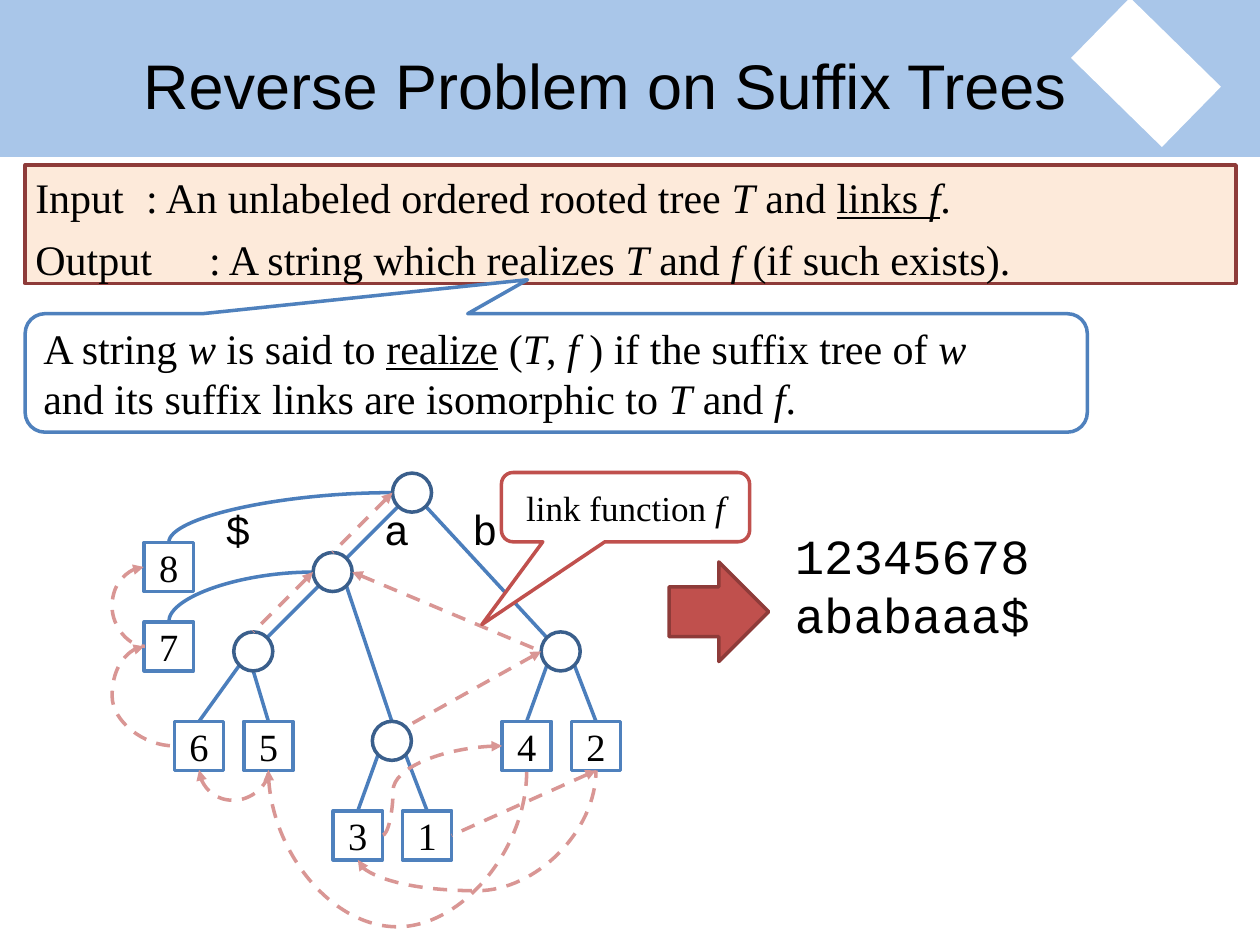
from lxml.etree import SubElement
from pptx import Presentation
from pptx.dml.color import RGBColor
from pptx.enum.dml import MSO_LINE
from pptx.enum.shapes import MSO_CONNECTOR, MSO_SHAPE
from pptx.enum.text import MSO_ANCHOR, PP_ALIGN
from pptx.oxml.ns import qn
from pptx.util import Inches, Pt

COLORS = {
    "band": "558ED5", "white": "FFFFFF", "text": "000000",
    "problem": "FDEADA", "dark_red": "8E3B39", "red": "C0504D",
    "blue": "4F81BD", "node": "3A5F8C", "edge": "4B7EBC", "link": "D99694",
}
SERIF, MONO = "Times New Roman", "Courier New"
NODE, LEAF = 0.31, 0.39

# Centres relative to the top left of the tree
NODES = {"root": (2.13, 0.16), "a": (1.5, 0.79), "aa": (0.87, 1.42),
         "aba": (1.97, 2.13), "ba": (3.31, 1.42)}
LEAVES = {"8": (0.2, 0.75), "7": (0.2, 1.38), "6": (0.44, 2.17), "5": (0.99, 2.17),
          "4": (3.04, 2.17), "2": (3.59, 2.17), "3": (1.7, 2.88), "1": (2.25, 2.88)}
EDGES = ["root.sw a.ne", "root.se ba.nw", "a.sw aa.ne", "a.se aba.n", "aa.sw 6.n",
         "aa.s 5.n", "aba.sw 3.n", "aba.se 1.n", "ba.sw 4.n", "ba.se 2.n"]
LEAF_CURVES = ["root.w 8.n", "a.w 7.n"]
# Each link is listed as target, then source
LINKS = ["ba.w aba.ne", "root.w a.n", "a.e ba.w", "a.w aa.n", "2.s 1.e"]
# The last value is where the curve turns: x for side anchors, y for bottom ones
CURVED_LINKS = [("3.s 2.s", 3.32), ("4.w 3.e", 1.98), ("5.s 4.s", 3.63),
                ("6.s 5.s", 2.61), ("7.w 6.w", -0.25), ("8.w 7.w", -0.25)]
EDGE_LABELS = {"$": 0.55, "a": 1.81, "b": 2.51}


def rgb(name):
    return RGBColor.from_string(COLORS[name])


def add_box(slide, kind, box, fill, line=None, adjustments=()):
    shape = slide.shapes.add_shape(kind, *map(Inches, box))
    shape.shadow.inherit = False
    for index, value in enumerate(adjustments):
        shape.adjustments[index] = value
    shape.fill.solid()
    shape.fill.fore_color.rgb = rgb(fill)
    if line:
        shape.line.color.rgb = rgb(line)
        shape.line.width = Pt(2)
    else:
        shape.line.fill.background()
    return shape


def write(shape, paragraphs, size, font=SERIF, align=PP_ALIGN.LEFT,
          anchor=MSO_ANCHOR.MIDDLE, wrap=True):
    """Fill a shape; a run is (text, style), with i for italic and u for underline."""
    frame = shape.text_frame
    frame.word_wrap = wrap
    frame.vertical_anchor = anchor
    for index, runs in enumerate(paragraphs):
        paragraph = frame.add_paragraph() if index else frame.paragraphs[0]
        paragraph.alignment = align
        for text, style in runs:
            if text == "\n":
                paragraph.add_line_break()
                continue
            run = paragraph.add_run()
            run.text = text
            run.font.name, run.font.size = font, Pt(size)
            run.font.color.rgb = rgb("text")
            run.font.italic, run.font.underline = "i" in style, "u" in style
    return frame


def add_label(slide, box, runs, size, font, **options):
    label = slide.shapes.add_textbox(*map(Inches, box))
    return write(label, [runs], size, font, **options)


def add_line(slide, start, end, color, width=2, kind=MSO_CONNECTOR.STRAIGHT):
    line = slide.shapes.add_connector(kind, *map(Inches, (*start, *end)))
    line.line.color.rgb = rgb(color)
    line.line.width = Pt(width)
    SubElement(line._element.spPr, qn("a:effectLst"))
    return line


def make_link(line):
    line.line.dash_style = MSO_LINE.DASH
    outline = line._element.spPr.find(qn("a:ln"))
    SubElement(outline, qn("a:headEnd"), type="triangle")


def add_curve(slide, start, end, color, bend=None, vertical=False):
    """Curve with one corner, or with a turn at bend when that is given."""
    (x1, y1), (x2, y2) = start, end
    line = add_line(slide, start, end, color, kind=MSO_CONNECTOR.CURVE)
    properties = line._element.spPr
    preset = properties.find(qn("a:prstGeom"))
    if bend is None:
        preset.set("prst", "curvedConnector2")
        return line
    # The turn is a share of the run, so the run may not be zero
    origin, run = (y1, y2 - y1) if vertical else (x1, x2 - x1)
    run = run if abs(run) > 0.01 else 0.01
    across = x1 - x2 if vertical else y2 - y1
    width, height = abs(run), abs(across)
    line.left, line.top = Inches((x1 + x2 - width) / 2), Inches((y1 + y2 - height) / 2)
    line.width, line.height = Inches(width), Inches(height)
    transform = properties.find(qn("a:xfrm"))
    transform.set("rot", "5400000" if vertical else "0")
    transform.set("flipH", str(int(run < 0)))
    transform.set("flipV", str(int(across < 0)))
    guides = preset.find(qn("a:avLst"))
    if guides is None:
        guides = SubElement(preset, qn("a:avLst"))
    share = round((bend - origin) / run * 100000)
    SubElement(guides, qn("a:gd"), name="adj1", fmla=f"val {share}")
    return line


def add_header(slide, left, top, width):
    band = add_line(slide, (left, top + 0.62), (left + width, top + 0.62), "band", 90)
    color = band._element.spPr.find(".//" + qn("a:srgbClr"))
    SubElement(color, qn("a:alpha"), val="50000")
    corner = add_box(slide, MSO_SHAPE.RECTANGLE,
                     (left + 8.59, top + 0.24, 1.01, 0.67), "white")
    corner.rotation = 44.4
    add_label(slide, (left + 0.23, top + 0.16, 9.14, 1.02),
              [("Reverse Problem on Suffix Trees", "")], 36, "Arial",
              align=PP_ALIGN.CENTER)


def add_problem(slide, box):
    problem = add_box(slide, MSO_SHAPE.RECTANGLE, box, "problem", "dark_red")
    frame = write(problem, [
        [("Input\t: An unlabeled ordered rooted tree ", ""), ("T", "i"), (" and ", ""),
         ("links ", "u"), ("f", "iu"), (".", "")],
        [("Output\t: A string which realizes ", ""), ("T", "i"), (" and ", ""),
         ("f", "i"), (" (if such exists).", "")],
    ], 24, wrap=False)
    frame.margin_left = frame.margin_right = Inches(0.08)
    frame.margin_top = Inches(0.1)
    for paragraph in frame.paragraphs:
        properties = paragraph._p.get_or_add_pPr()
        properties.set("marL", str(Inches(0.38)))
        properties.set("indent", str(Inches(-0.38)))
    frame.paragraphs[1].space_before = Pt(6.5)


def add_definition(slide, box):
    definition = add_box(slide, MSO_SHAPE.ROUNDED_RECTANGULAR_CALLOUT, box,
                         "white", "blue", (-0.027, -0.787, 0.167))
    write(definition, [[
        ("A string ", ""), ("w", "i"), (" is said to ", ""), ("realize", "u"), (" (", ""),
        ("T", "i"), (", ", ""), ("f", "i"), (" ) if the suffix tree of ", ""),
        ("w ", "i"), ("\n", ""), ("and its suffix links are isomorphic to ", ""),
        ("T", "i"), (" and ", ""), ("f", "i"), (".", ""),
    ]], 24)


def add_tree(slide, left, top):
    def anchor(place):
        """Point on the border of a node or leaf, such as root.sw."""
        name, side = place.split(".")
        x, y = NODES.get(name) or LEAVES[name]
        reach = (NODE if name in NODES else LEAF) / 2
        if len(side) == 2:
            reach *= 0.7
        return (left + x + reach * (("e" in side) - ("w" in side)),
                top + y + reach * (("s" in side) - ("n" in side)))

    def ends(pair):
        return [anchor(place) for place in pair.split()]

    def square(center, size):
        return left + center[0] - size / 2, top + center[1] - size / 2, size, size

    for pair in EDGES:
        add_line(slide, *ends(pair), "edge")
    for pair in LEAF_CURVES:
        add_curve(slide, *ends(pair), "edge")
    for center in NODES.values():
        add_box(slide, MSO_SHAPE.OVAL, square(center, NODE), "white", "node")
    for number, center in LEAVES.items():
        leaf = add_box(slide, MSO_SHAPE.RECTANGLE, square(center, LEAF), "white", "blue")
        write(leaf, [[(number, "")]], 22, align=PP_ALIGN.CENTER, wrap=False)
    for pair in LINKS:
        make_link(add_line(slide, *ends(pair), "link"))
    for pair, bend in CURVED_LINKS:
        vertical = pair.endswith("s")
        bend += top if vertical else left
        make_link(add_curve(slide, *ends(pair), "link", bend, vertical))

    callout = add_box(slide, MSO_SHAPE.ROUNDED_RECTANGULAR_CALLOUT,
                      (left + 2.84, top, 1.97, 0.55), "white", "red",
                      (-0.579, 1.694, 0.167))
    write(callout, [[("link function ", ""), ("f", "i")]], 20, align=PP_ALIGN.CENTER)
    for letter, x in EDGE_LABELS.items():
        add_label(slide, (left + x, top + 0.2, 0.4, 0.5), [(letter, "")], 24, MONO,
                  anchor=MSO_ANCHOR.TOP, wrap=False)


def add_result(slide, left, top):
    add_box(slide, MSO_SHAPE.RIGHT_ARROW, (left, top + 0.34, 0.79, 0.79),
            "red", "dark_red")
    add_label(slide, (left + 0.9, top, 2.08, 1.04),
              [("12345678", ""), ("\n", ""), ("ababaaa$", "")], 28, MONO,
              anchor=MSO_ANCHOR.TOP, wrap=False)


def main():
    deck = Presentation()
    deck.slide_width, deck.slide_height = Inches(10), Inches(7.5)
    slide = deck.slides.add_slide(deck.slide_layouts[6])
    add_header(slide, 0, 0, 10)
    add_problem(slide, (0.2, 1.31, 9.61, 0.94))
    add_definition(slide, (0.2, 2.49, 8.43, 0.94))
    add_tree(slide, 1.14, 3.75)
    add_result(slide, 5.31, 4.12)
    deck.save("out.pptx")


if __name__ == "__main__":
    main()
